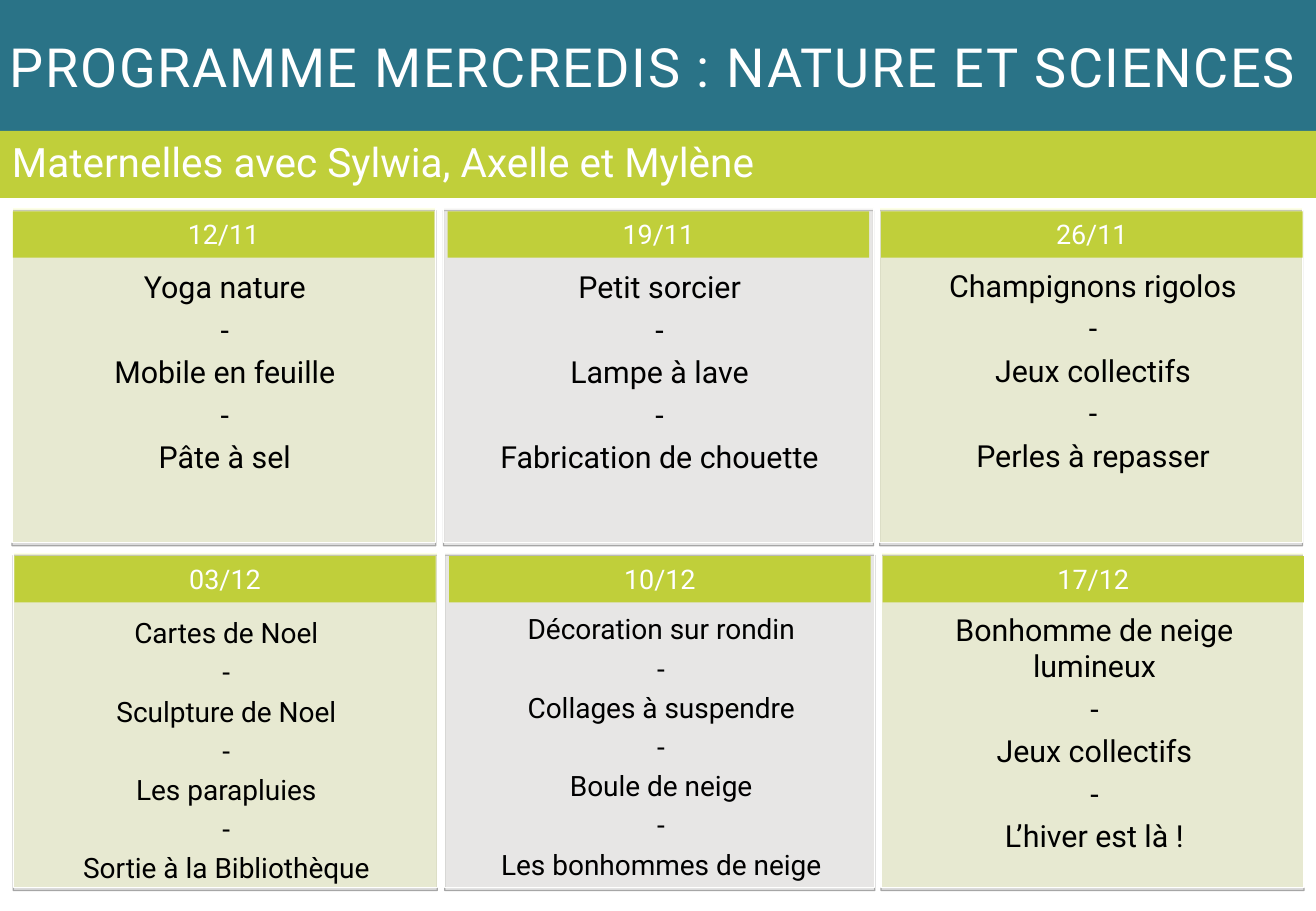
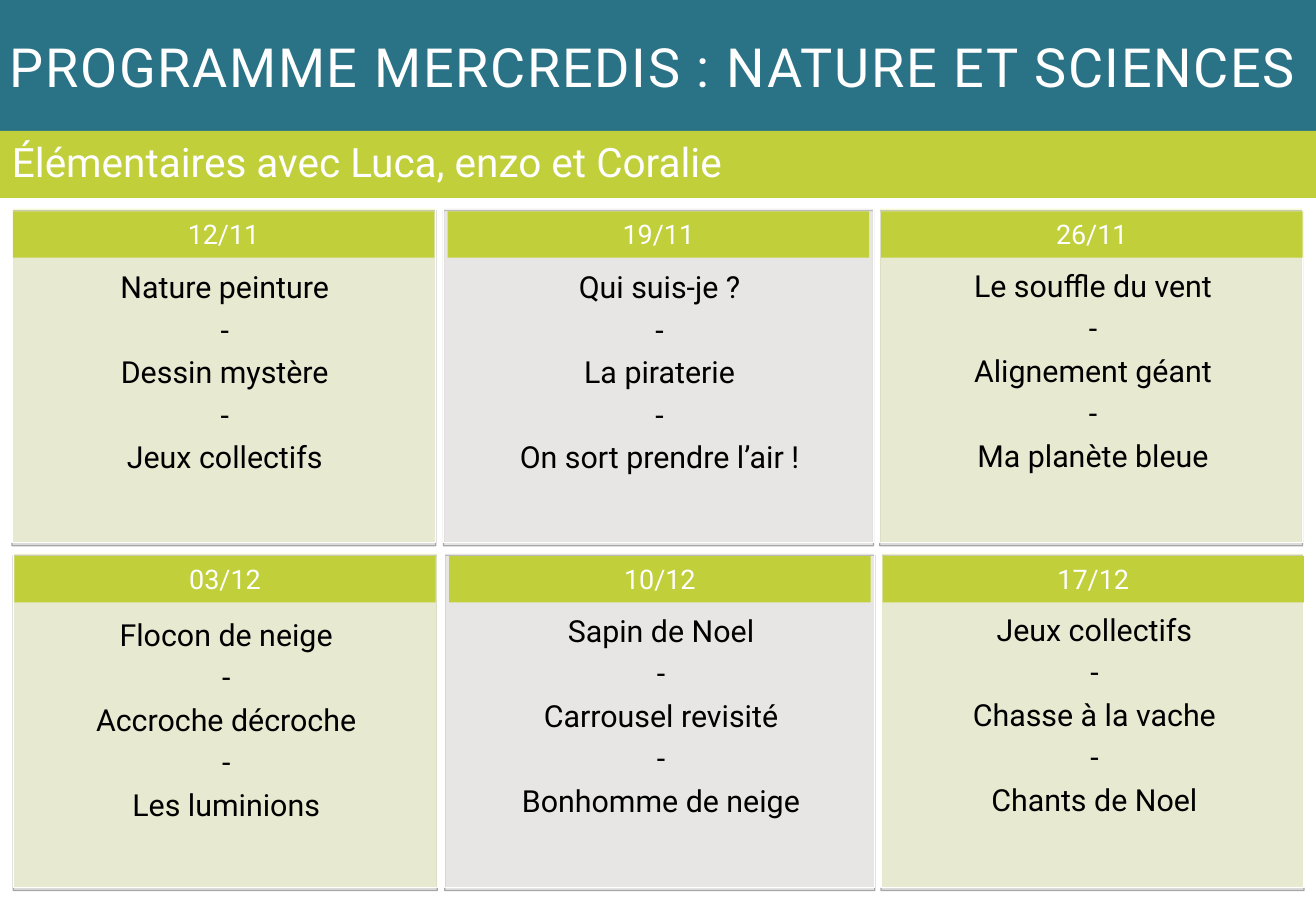
from itertools import chain
from typing import NamedTuple

from lxml.etree import SubElement
from pptx import Presentation
from pptx.dml.color import RGBColor
from pptx.enum.shapes import MSO_SHAPE
from pptx.enum.text import MSO_ANCHOR as Anchor, PP_ALIGN as Align
from pptx.oxml.ns import qn
from pptx.util import Cm, Pt

FONT = "Roboto"
BLUE, LIME, WHITE, BLACK = "2A7387", "C0CF3A", "FFFFFF", "000000"
PANEL_LINE = "FFFFFE"
TITLE = "PROGRAMME MERCREDIS : NATURE ET SCIENCES"
DATES = ["12/11", "19/11", "26/11", "03/12", "10/12", "17/12"]

PAGE_W, PAGE_H = 27.51, 19.05
BAND_W = 27.56
TITLE_H, GROUP_H = 2.74, 1.4
PANEL_H = 7.01
DATE_W, DATE_H, DATE_GAP = 8.81, 0.97, 0.08
ACTIVITIES_W, ACTIVITIES_H = 8.86, 5.79


class Column(NamedTuple):
    left: float
    width: float
    text_left: float
    colour: str
    opacity: int


class Row(NamedTuple):
    shift: float
    top: float
    activity_tops: tuple[float, ...]


class Programme(NamedTuple):
    group: str
    activities: list[list[str]]


COLUMNS = [
    Column(0.25, 8.86, 0.27, "FAFFC2", 40),
    Column(9.27, 8.99, 9.36, "EEECE8", 30),
    Column(18.39, 8.84, 18.42, "FAFFC2", 40),
]
ROWS = [
    Row(0, 4.34, (5.49, 5.49, 5.46)),
    Row(0.03, 11.55, (12.75, 12.67, 12.65)),
]
PROGRAMMES = [
    Programme("Maternelles avec Sylwia, Axelle et Mylène", [
        ["Yoga nature", "Mobile en feuille", "Pâte à sel"],
        ["Petit sorcier", "Lampe à lave", "Fabrication de chouette"],
        ["Champignons rigolos", "Jeux collectifs", "Perles à repasser"],
        ["Cartes de Noel", "Sculpture de Noel", "Les parapluies",
         "Sortie à la Bibliothèque"],
        ["Décoration sur rondin", "Collages à suspendre", "Boule de neige",
         "Les bonhommes de neige"],
        ["Bonhomme de neige lumineux", "Jeux collectifs", "L’hiver est là !"],
    ]),
    Programme("Élémentaires avec Luca, enzo et Coralie", [
        ["Nature peinture", "Dessin mystère", "Jeux collectifs"],
        ["Qui suis-je ?", "La piraterie", "On sort prendre l’air !"],
        ["Le souffle du vent", "Alignement géant", "Ma planète bleue"],
        ["Flocon de neige", "Accroche décroche", "Les luminions"],
        ["Sapin de Noel", "Carrousel revisité", "Bonhomme de neige"],
        ["Jeux collectifs", "Chasse à la vache", "Chants de Noel"],
    ]),
]


def rgb(colour: str) -> RGBColor:
    return RGBColor.from_string(colour)


def add_rect(slide, left: float, top: float, width: float, height: float, colour: str):
    rect = slide.shapes.add_shape(
        MSO_SHAPE.RECTANGLE, Cm(left), Cm(top), Cm(width), Cm(height))
    rect.shadow.inherit = False
    rect.fill.solid()
    rect.fill.fore_color.rgb = rgb(colour)
    rect.line.fill.background()
    return rect


def write(shape, lines: list[str], size: float, colour: str, align: Align, anchor: Anchor) -> None:
    frame = shape.text_frame
    frame.word_wrap = True
    frame.vertical_anchor = anchor
    frame.text = "\n".join(lines)
    for index, paragraph in enumerate(frame.paragraphs):
        paragraph.alignment = align
        if index:
            paragraph.space_before = Pt(0.2 * size)
        for run in paragraph.runs:
            run.font.name = FONT
            run.font.size = Pt(size)
            run.font.color.rgb = rgb(colour)


def add_panel(slide, column: Column, row: Row) -> None:
    """Draw a translucent panel with a thin shadow under its lower edge."""
    panel = add_rect(slide, column.left + row.shift, row.top, column.width, PANEL_H, column.colour)
    panel.line.color.rgb = rgb(PANEL_LINE)
    panel.line.width = Pt(0.75)
    properties = panel.element.spPr
    fill_colour = properties.find(qn("a:solidFill")).find(qn("a:srgbClr"))
    SubElement(fill_colour, qn("a:alpha"), val=str(column.opacity * 1000))
    shadow = SubElement(
        properties.find(qn("a:effectLst")), qn("a:outerShdw"),
        blurRad="0", dist=str(Pt(1.8)), dir="5400000", algn="t", rotWithShape="0")
    shadow_colour = SubElement(shadow, qn("a:srgbClr"), val=BLACK)
    SubElement(shadow_colour, qn("a:alpha"), val="35000")


def add_bands(slide, group: str) -> None:
    title = add_rect(slide, -0.05, 0, BAND_W, TITLE_H, BLUE)
    write(title, [TITLE], 32, WHITE, Align.LEFT, Anchor.MIDDLE)
    title.text_frame.margin_right = 0
    title.text_frame.paragraphs[0].runs[0].font._element.set("spc", "100")
    band = add_rect(slide, 0, TITLE_H, BAND_W, GROUP_H, LIME)
    write(band, [group], 24, WHITE, Align.LEFT, Anchor.TOP)


def add_day(slide, column: Column, row: Row, top: float, date: str, activities: list[str]) -> None:
    left = column.text_left + row.shift
    header = add_rect(slide, left, row.top + DATE_GAP, DATE_W, DATE_H, LIME)
    write(header, [date], 16, WHITE, Align.CENTER, Anchor.TOP)
    body = slide.shapes.add_textbox(
        Cm(left), Cm(top), Cm(ACTIVITIES_W), Cm(ACTIVITIES_H))
    lines = list(chain.from_iterable((activity, "-") for activity in activities))[:-1]
    size = 16.6 if len(activities) > 3 else 18
    write(body, lines, size, BLACK, Align.CENTER, Anchor.TOP)


def add_programme(deck, programme: Programme) -> None:
    slide = deck.slides.add_slide(deck.slide_layouts[6])
    cells = [(column, row, top) for row in ROWS
             for column, top in zip(COLUMNS, row.activity_tops)]
    for column, row, _ in cells:
        add_panel(slide, column, row)
    add_bands(slide, programme.group)
    for cell, date, activities in zip(cells, DATES, programme.activities):
        add_day(slide, *cell, date, activities)


def main() -> None:
    deck = Presentation()
    deck.slide_width, deck.slide_height = Cm(PAGE_W), Cm(PAGE_H)
    for programme in PROGRAMMES:
        add_programme(deck, programme)
    deck.save("out.pptx")


if __name__ == "__main__":
    main()
